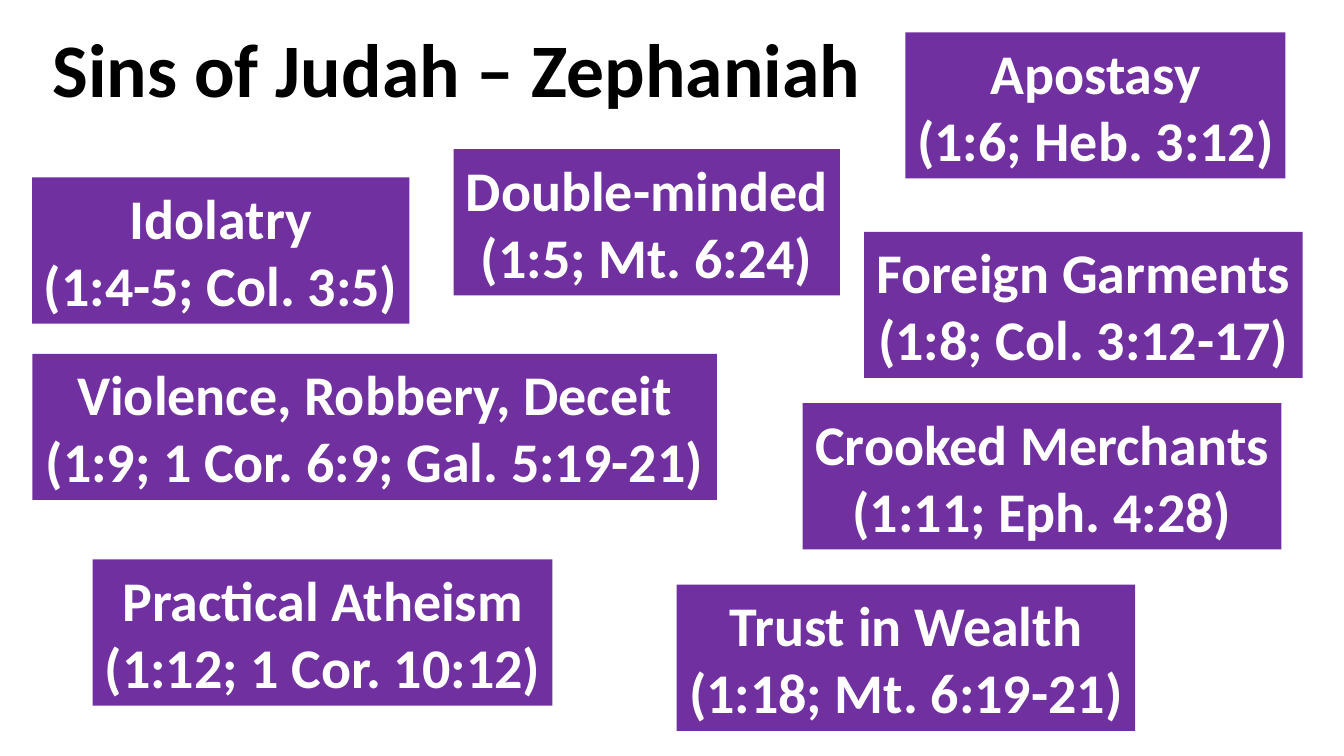
"""Build the slide on the sins of Judah in Zephaniah."""
from pptx import Presentation
from pptx import util as u
from pptx.dml import color
from pptx.enum import shapes, text

THEME = {
    "font": "Calibri",
    "title_size": 54,
    "sin_size": 40,
    "title_color": color.RGBColor.from_string("000000"),
    "sin_color": color.RGBColor.from_string("FFFFFF"),
    "box_fill": color.RGBColor.from_string("7030A0"),
}
BOX_HEIGHT = 1.45
SINS = [
    ("Idolatry", "(1:4-5; Col. 3:5)", 0.32, 1.76, 3.74),
    ("Double-minded", "(1:5; Mt. 6:24)", 4.5, 1.48, 3.83),
    ("Apostasy", "(1:6; Heb. 3:12)", 8.98, 0.32, 3.77),
    ("Foreign Garments", "(1:8; Col. 3:12-17)", 8.57, 2.3, 4.35),
    ("Violence, Robbery, Deceit", "(1:9; 1 Cor. 6:9; Gal. 5:19-21)", 0.32, 3.51, 6.79),
    ("Crooked Merchants", "(1:11; Eph. 4:28)", 7.96, 4, 4.75),
    ("Practical Atheism", "(1:12; 1 Cor. 10:12)", 0.92, 5.55, 4.56),
    ("Trust in Wealth", "(1:18; Mt. 6:19-21)", 6.71, 5.8, 4.55),
]


def write(tf, lines, role, align, wrap):
    frame_format = {
        "word_wrap": wrap,
        "auto_size": text.MSO_AUTO_SIZE.SHAPE_TO_FIT_TEXT,
        "vertical_anchor": text.MSO_ANCHOR.MIDDLE,
    }
    for name, value in frame_format.items():
        setattr(tf, name, value)
    font_format = {"name": THEME["font"], "size": u.Pt(THEME[f"{role}_size"]), "bold": True}
    tf.text = "\n".join(lines)
    for p in tf.paragraphs:
        p.alignment = align
        font = p.runs[0].font
        for name, value in font_format.items():
            setattr(font, name, value)
        font.color.rgb = THEME[f"{role}_color"]


prs = Presentation()
prs.slide_width, prs.slide_height = u.Inches(13.33), u.Inches(7.5)
s = prs.slides.add_slide(prs.slide_layouts[5])

title = s.shapes.title
title_place = {"left": 0.42, "top": 0.16, "width": 8.56, "height": 1.01}
for name, value in title_place.items():
    setattr(title, name, u.Inches(value))
write(title.text_frame, ["Sins of Judah – Zephaniah"], "title", text.PP_ALIGN.LEFT, True)

for sin, verses, left, top, width in SINS:
    place = [u.Inches(v) for v in (left, top, width, BOX_HEIGHT)]
    sp = s.shapes.add_shape(shapes.MSO_SHAPE.RECTANGLE, *place)
    sp.shadow.inherit = False
    sp.fill.solid()
    sp.fill.fore_color.rgb = THEME["box_fill"]
    sp.line.fill.background()
    write(sp.text_frame, [sin, verses], "sin", text.PP_ALIGN.CENTER, False)

prs.save("out.pptx")
